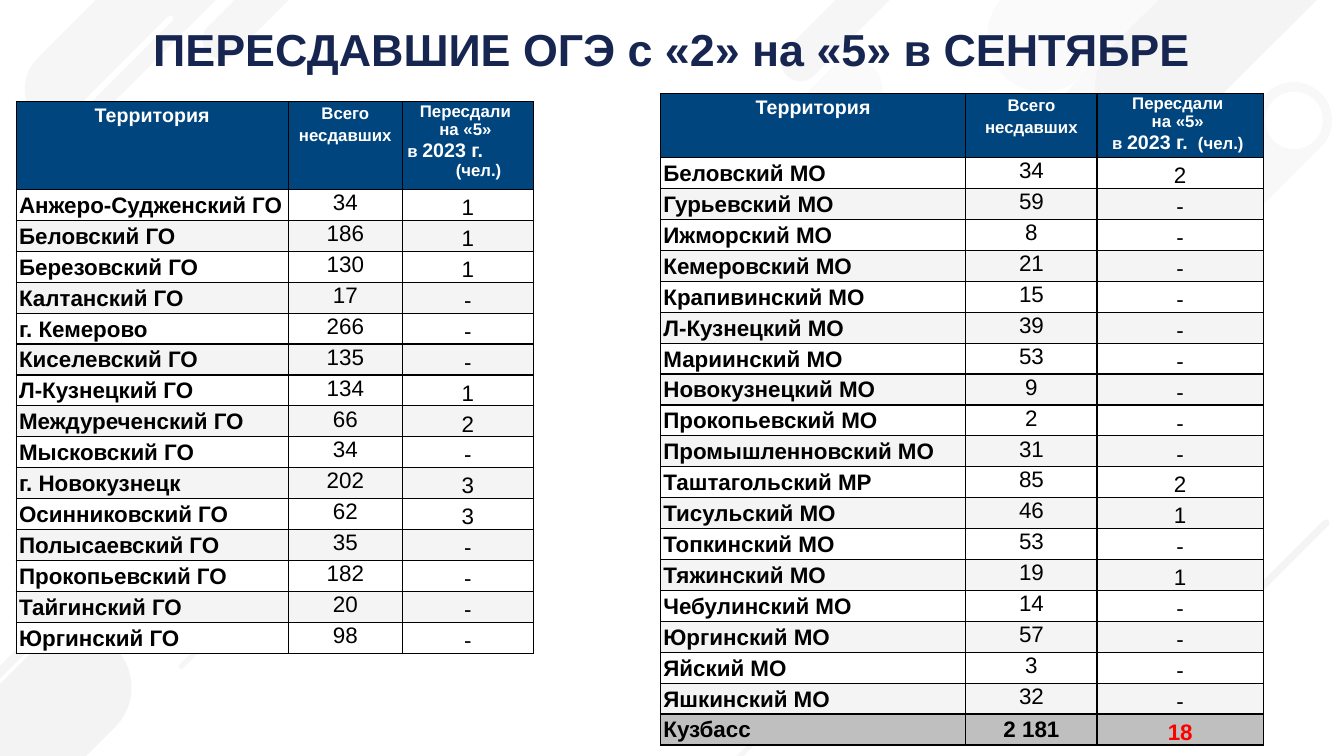
"""Build the slide on September exam retakes by territory."""
from lxml.etree import SubElement
from pptx import Presentation
from pptx.dml.color import RGBColor
from pptx.enum.shapes import MSO_SHAPE
from pptx.enum.text import MSO_ANCHOR, PP_ALIGN
from pptx.oxml.ns import qn
from pptx.util import Inches, Pt

TITLE = "ПЕРЕСДАВШИЕ ОГЭ с «2» на «5» в СЕНТЯБРЕ"
CITIES = [
    ("Анжеро-Судженский ГО", "34", "1"), ("Беловский ГО", "186", "1"),
    ("Березовский ГО", "130", "1"), ("Калтанский ГО", "17", "-"),
    ("г. Кемерово", "266", "-"), ("Киселевский ГО", "135", "-"),
    ("Л-Кузнецкий ГО", "134", "1"), ("Междуреченский ГО", "66", "2"),
    ("Мысковский ГО", "34", "-"), ("г. Новокузнецк", "202", "3"),
    ("Осинниковский ГО", "62", "3"), ("Полысаевский ГО", "35", "-"),
    ("Прокопьевский ГО", "182", "-"), ("Тайгинский ГО", "20", "-"),
    ("Юргинский ГО", "98", "-"),
]
DISTRICTS = [
    ("Беловский МО", "34", "2"), ("Гурьевский МО", "59", "-"),
    ("Ижморский МО", "8", "-"), ("Кемеровский МО", "21", "-"),
    ("Крапивинский МО", "15", "-"), ("Л-Кузнецкий МО", "39", "-"),
    ("Мариинский МО", "53", "-"), ("Новокузнецкий МО", "9", "-"),
    ("Прокопьевский МО", "2", "-"), ("Промышленновский МО", "31", "-"),
    ("Таштагольский МР", "85", "2"), ("Тисульский МО", "46", "1"),
    ("Топкинский МО", "53", "-"), ("Тяжинский МО", "19", "1"),
    ("Чебулинский МО", "14", "-"), ("Юргинский МО", "57", "-"),
    ("Яйский МО", "3", "-"), ("Яшкинский МО", "32", "-"),
    ("Кузбасс", "2 181", "18"),
]
TOTAL = "Кузбасс"
LEFT, CENTER = PP_ALIGN.LEFT, PP_ALIGN.CENTER
YEAR = [("в ", 12), ("2023 г. ", 14)]
RETAKEN = [(CENTER, 0, [("Пересдали ", 12)]), (CENTER, 0, [("на «5» ", 12)])]
NARROW_HEAD = RETAKEN + [(LEFT, 0.02, YEAR), (CENTER, 0.26, [("(чел.) ", 12)])]
WIDE_HEAD = RETAKEN + [(CENTER, 0, YEAR + [(" (чел.) ", 12)])]
TABLES = [
    (0.16, 1.01, (2.7, 1.13, 1.3), 0.87, NARROW_HEAD, CITIES),
    (6.55, 0.93, (3.03, 1.3, 1.65), 0.63, WIDE_HEAD, DISTRICTS),
]
ROW = 0.3
BAR, DISC = MSO_SHAPE.ROUNDED_RECTANGLE, MSO_SHAPE.OVAL
DECOR = [
    (BAR, -0.06, 6.16, 1.11, 1.83, "F2F2F2", 85),
    (BAR, 0.28, 5.65, 0.09, 1.39, "F2F2F2", 72),
    (BAR, 2.53, 4.76, 0.05, 2.19, "D9D9D9", 22),
    (BAR, 8.29, 4.44, 0.05, 4.17, "D9D9D9", 22),
    (BAR, 11.53, -2.88, 1.11, 6.14, "F2F2F2", 42),
    (BAR, 12.13, 0.68, 0.76, 1.67, "F2F2F2", 51),
    (DISC, 12.55, 0.91, 0.57, 0.57, "FFFFFF", 100),
    (DISC, 11.92, 1.55, 0.57, 0.57, "FFFFFF", 100),
    (BAR, 12.64, -3.99, 1.11, 6.14, "F2F2F2", 59),
    (BAR, 11.57, -4.49, 1.11, 6.14, "F2F2F2", 32),
    (BAR, 10.56, 2.51, 0.2, 4.19, "F2F2F2", 52),
    (BAR, 7.72, 0.41, 0.6, 1.83, "F2F2F2", 37),
    (BAR, 8.26, -0.81, 0.38, 1.83, "F2F2F2", 65),
    (BAR, 2.52, -1.03, 0.38, 1.83, "F2F2F2", 65),
    (BAR, 0.97, -1.29, 0.84, 2.89, "F2F2F2", 65),
    (BAR, 0.68, -0.25, 0.06, 2.83, "FFFFFF", 100),
    (BAR, 12.26, 4.8, 0.07, 2.49, "F2F2F2", 82),
]


def paint(fill, color):
    fill.solid()
    fill.fore_color.rgb = RGBColor.from_string(color)


def apply(target, values):
    for name, value in values.items():
        setattr(target, name, value)


def write(para, spans, color, bold, **layout):
    apply(para, layout)
    for text, size in spans:
        span = para.add_run()
        span.text = text
        apply(span.font, {"name": "Arial", "size": Pt(size), "bold": bold})
        span.font.color.rgb = RGBColor.from_string(color)


def add_decor(page, kind, left, top, width, height, color, opacity):
    shape = page.shapes.add_shape(kind, *map(Inches, (left, top, width, height)))
    shape.shadow.inherit = False
    shape.line.fill.background()
    paint(shape.fill, color)
    if kind == BAR:
        shape.rotation = 45
        shape.adjustments[0] = 0.5
    if opacity < 100:
        tint = shape.fill._xPr.find(".//" + qn("a:srgbClr"))
        SubElement(tint, qn("a:alpha"), val=str(opacity * 1000))


def dress(cell, color, anchor, side, top):
    properties = cell._tc.get_or_add_tcPr()
    for edge in ("lnL", "lnR", "lnT", "lnB"):
        line = SubElement(properties, qn("a:" + edge), w=str(Pt(1)))
        solid = SubElement(line, qn("a:solidFill"))
        SubElement(solid, qn("a:srgbClr"), val="000000")
    paint(cell.fill, color)
    apply(cell, {"vertical_anchor": anchor, "margin_left": Inches(side),
                 "margin_right": Inches(side), "margin_top": Inches(top),
                 "margin_bottom": 0})


def fill_head(cells, last_head):
    for cell in cells:
        dress(cell, "00457E", MSO_ANCHOR.TOP, 0.03, 0)
    for cell, text, size in zip(cells, ("Территория", "Всего несдавших"), (14, 12)):
        write(cell.text_frame.paragraphs[0], [(text, size)], "FFFFFF", True,
              alignment=CENTER, line_spacing=1.15, space_after=Pt(10))
    frame = cells[2].text_frame
    for number, (align, indent, spans) in enumerate(last_head):
        para = frame.add_paragraph() if number else frame.paragraphs[0]
        if indent:
            para._p.get_or_add_pPr().set("marL", str(Inches(indent)))
        write(para, spans, "FFFFFF", True, alignment=align)


def fill_row(cells, number, record):
    total = record[0] == TOTAL
    back = "BFBFBF" if total else ("FFFFFF", "F4F4F4")[number % 2]
    middle = MSO_ANCHOR.MIDDLE if total else MSO_ANCHOR.TOP
    name_layout = {"alignment": LEFT, "line_spacing": 1.15, "space_after": Pt(10)}
    value_layout = {"alignment": CENTER}
    styles = [
        (MSO_ANCHOR.TOP, 0.03, 0, "000000", True, name_layout),
        (middle, 0.01, 0.01, "000000", total, value_layout),
        (MSO_ANCHOR.BOTTOM, 0.01, 0.01, "FF0000" if total else "000000", total,
         value_layout),
    ]
    for cell, text, (anchor, side, top, color, bold, layout) in zip(cells, record, styles):
        dress(cell, back, anchor, side, top)
        write(cell.text_frame.paragraphs[0], [(text, 16)], color, bold, **layout)


def add_territories(page, left, top, widths, head, last_head, records):
    heights = [head] + [ROW] * len(records)
    area = map(Inches, (left, top, sum(widths), sum(heights)))
    table = page.shapes.add_table(len(heights), len(widths), *area).table
    apply(table, {"first_row": False, "horz_banding": False})
    for column, width in zip(table.columns, widths):
        column.width = Inches(width)
    for row, height in zip(table.rows, heights):
        row.height = Inches(height)
    head_row, *body = table.rows
    fill_head(list(head_row.cells), last_head)
    for number, (row, record) in enumerate(zip(body, records)):
        fill_row(row.cells, number, record)


def main():
    deck = Presentation()
    apply(deck, {"slide_width": Inches(13.33), "slide_height": Inches(7.5)})
    page = deck.slides.add_slide(deck.slide_layouts[6])
    paint(page.background.fill, "FFFFFF")
    for item in DECOR:
        add_decor(page, *item)
    box = page.shapes.add_textbox(0, Inches(0.17), deck.slide_width, Inches(0.64))
    box.text_frame.word_wrap = True
    write(box.text_frame.paragraphs[0], [(TITLE, 32)], "172551", True, alignment=CENTER)
    for item in TABLES:
        add_territories(page, *item)
    deck.save("out.pptx")


if __name__ == "__main__":
    main()
